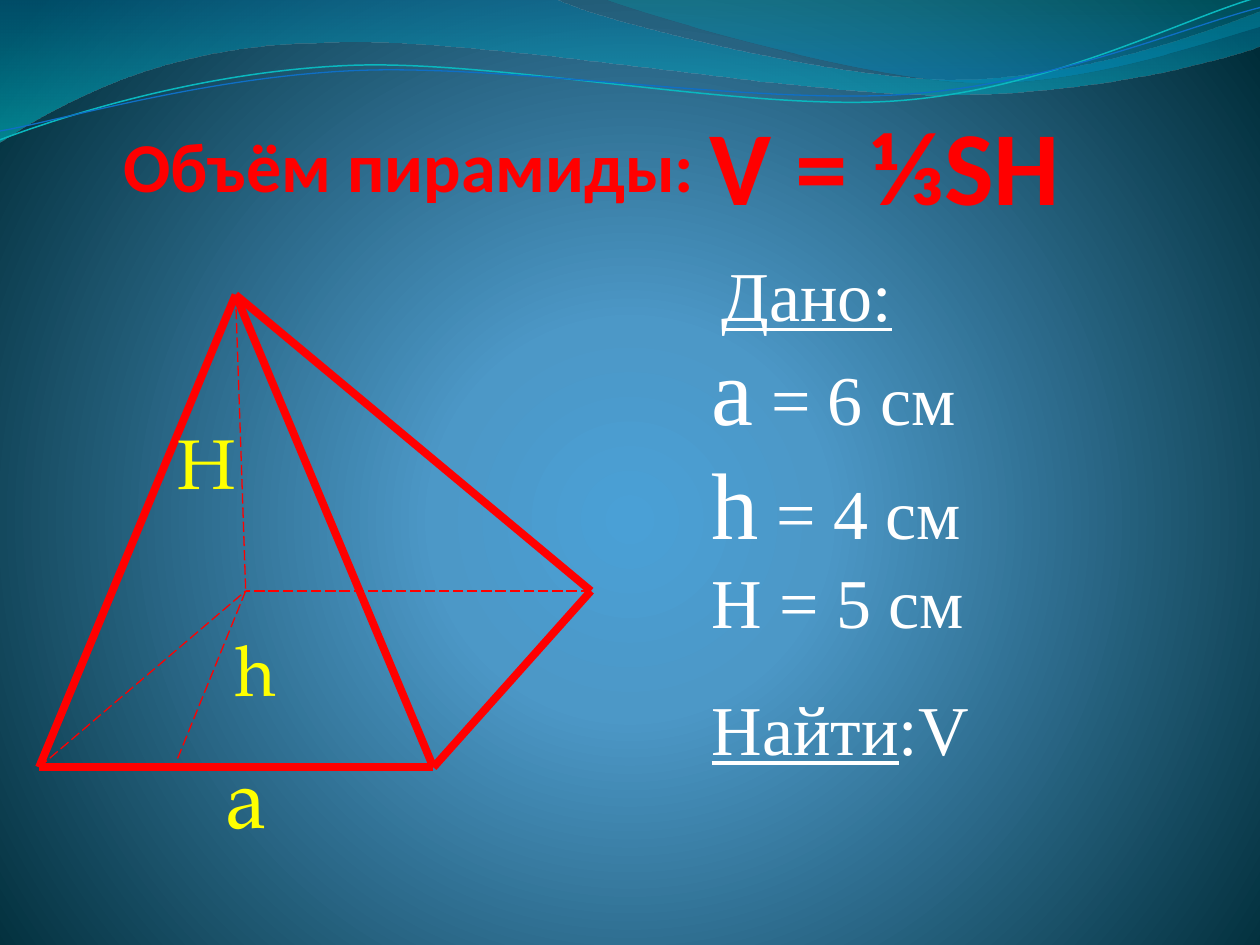
from dataclasses import dataclass

from lxml.etree import SubElement
from pptx import Presentation
from pptx.dml.color import RGBColor
from pptx.enum.dml import MSO_LINE
from pptx.enum.shapes import MSO_CONNECTOR
from pptx.enum.text import MSO_ANCHOR, MSO_AUTO_SIZE, PP_ALIGN
from pptx.oxml import parse_xml
from pptx.oxml.ns import nsdecls, qn
from pptx.util import Inches, Pt

RED = RGBColor(0xFF, 0x00, 0x00)
YELLOW = RGBColor(0xFF, 0xFF, 0x00)
WHITE = RGBColor(0xFF, 0xFF, 0xFF)
TEAL = RGBColor(0x0A, 0xB8, 0xBF)
BLUE = RGBColor(0x0F, 0x6F, 0xC6)
SKY = RGBColor(0x4A, 0xA0, 0xD6)
STEEL = RGBColor(0x4C, 0x98, 0xC7)
NIGHT = RGBColor(0x00, 0x2C, 0x38)
HEADING, SERIF, LABEL = "Calibri", "Times New Roman", "TeX Gyre Pagella"
DOWNWARD = '<a:lin ang="5400000" scaled="0"/>'
RADIAL = ('<a:path path="circle"><a:fillToRect l="10000" t="110000" '
          'r="10000" b="100000"/></a:path>')


@dataclass(frozen=True)
class Stop:
    position: int
    color: RGBColor
    opacity: int = 100


@dataclass(frozen=True)
class Span:
    text: str
    size: int
    underline: bool = False


@dataclass(frozen=True)
class Style:
    font: str
    color: RGBColor
    bold: bool = False
    align: PP_ALIGN = PP_ALIGN.LEFT


@dataclass(frozen=True)
class Wave:
    """A start point, cubic curves of three points and straight pieces of one."""
    start: tuple
    pieces: tuple
    stops: tuple = ()
    color: RGBColor | None = None
    weight: float = 0


FORMULA = Style(HEADING, RED, True)
TITLE = Style(HEADING, RED, True, PP_ALIGN.CENTER)
GIVEN = Style(SERIF, WHITE)
MARK = Style(LABEL, YELLOW, align=PP_ALIGN.CENTER)

WAVES = (
    Wave((0, -0.01), (
        ((4.4, -0.01),),
        ((4.76, 0.17), (6.64, 0.63), (7.58, 0.63)),
        ((8.53, 0.63), (9.58, 0.26), (10, 0.09)),
        ((10.01, 0.36),),
        ((9.83, 0.44), (8.7, 0.76), (7.46, 0.75)),
        ((6.22, 0.75), (3.82, 0.28), (2.57, 0.34)),
        ((1.29, 0.35), (0.46, 0.83), (-0.01, 1.13))),
        stops=(Stop(0, RGBColor(0x00, 0x74, 0xA1), 45),
               Stop(100, RGBColor(0x00, 0xC6, 0xCF), 55))),
    Wave((4.79, -0.01), (
        ((5.09, 0.11), (6.82, 0.62), (7.69, 0.65)),
        ((8.56, 0.69), (9.61, 0.32), (10, 0.21)),
        ((10, 0),)),
        stops=(Stop(0, RGBColor(0x00, 0xA1, 0xA9), 30),
               Stop(80, RGBColor(0x00, 0x8B, 0xBF), 45))),
    Wave((0, 1.11), (
        ((0.48, 0.93), (1.58, 0.57), (2.77, 0.52)),
        ((3.95, 0.47), (5.93, 0.89), (7.13, 0.8)),
        ((8.33, 0.71), (9.38, 0.15), (9.98, -0.02))), color=TEAL, weight=0.85),
    Wave((0, 1.04), (
        ((0.47, 0.96), (1.64, 0.61), (2.83, 0.56)),
        ((4.03, 0.51), (5.97, 0.83), (7.17, 0.75)),
        ((8.36, 0.67), (9.41, 0.21), (10, 0.06))), color=BLUE, weight=0.75),
)

# Pyramid vertices
APEX, FRONT_LEFT, FRONT_RIGHT = (1.87, 2.34), (0.31, 6.09), (3.44, 6.09)
BACK_RIGHT, BACK_LEFT, HEIGHT_FOOT = (4.69, 4.69), (1.95, 4.69), (1.41, 6.02)
VISIBLE_EDGES = ((APEX, FRONT_LEFT), (APEX, FRONT_RIGHT), (FRONT_LEFT, FRONT_RIGHT),
                 (FRONT_RIGHT, BACK_RIGHT), (APEX, BACK_RIGHT))
HIDDEN_EDGES = ((BACK_RIGHT, BACK_LEFT), (FRONT_LEFT, BACK_LEFT),
                (APEX, BACK_LEFT), (HEIGHT_FOOT, BACK_LEFT))


def set_gradient(parent, stops: tuple, direction: str) -> None:
    """Swap the solid fill in parent for a gradient."""
    marks = "".join(
        f'<a:gs pos="{stop.position * 1000}"><a:srgbClr val="{stop.color}">'
        f'<a:alpha val="{stop.opacity * 1000}"/></a:srgbClr></a:gs>' for stop in stops)
    gradient = parse_xml(f'<a:gradFill {nsdecls("a")} rotWithShape="1">'
                         f'<a:gsLst>{marks}</a:gsLst>{direction}</a:gradFill>')
    parent.replace(parent.find(qn("a:solidFill")), gradient)


def bend(shape, pieces: tuple) -> None:
    """Join the three straight steps of each curved piece into one cubic curve."""
    outline = shape.element.find(".//" + qn("a:path"))
    steps = iter(outline.findall(qn("a:lnTo")))
    for piece in pieces:
        group = [next(steps) for _ in piece]
        if len(group) == 3:
            curve = parse_xml(f'<a:cubicBezTo {nsdecls("a")}/>')
            group[0].addprevious(curve)
            for step in group:
                curve.append(step[0])
                outline.remove(step)


def draw_wave(page, wave: Wave) -> None:
    builder = page.shapes.build_freeform(*map(Inches, wave.start), scale=1.0)
    points = [tuple(map(Inches, point)) for piece in wave.pieces for point in piece]
    builder.add_line_segments(points, close=bool(wave.stops))
    shape = builder.convert_to_shape()
    bend(shape, wave.pieces)
    shape.shadow.inherit = False
    if wave.stops:
        shape.fill.solid()
        set_gradient(shape.element.spPr, wave.stops, DOWNWARD)
        shape.line.fill.background()
    else:
        shape.fill.background()
        shape.line.color.rgb = wave.color
        shape.line.width = Pt(wave.weight)


def draw_edge(page, start: tuple, end: tuple, hidden: bool) -> None:
    ends = [Inches(value) for value in (*start, *end)]
    edge = page.shapes.add_connector(MSO_CONNECTOR.STRAIGHT, *ends)
    edge.line.color.rgb = RED
    edge.line.width = Pt(0.75 if hidden else 4.5)
    if hidden:
        edge.line.dash_style = MSO_LINE.LONG_DASH
    SubElement(edge.element.spPr, qn("a:effectLst"))


def write(box, lines: tuple, style: Style) -> None:
    frame = box.text_frame
    for index, spans in enumerate(lines):
        para = frame.add_paragraph() if index else frame.paragraphs[0]
        para.alignment = style.align
        for part in spans:
            span = para.add_run()
            span.text = part.text
            span.font.name = style.font
            span.font.size = Pt(part.size)
            span.font.bold = style.bold
            span.font.underline = part.underline
            span.font.color.rgb = style.color


def add_text(page, place: tuple, lines: tuple, style: Style, wrap: bool = True):
    box = page.shapes.add_textbox(*map(Inches, place))
    box.text_frame.word_wrap = wrap
    write(box, lines, style)
    return box


def sit_on_bottom(box) -> None:
    frame = box.text_frame
    frame.word_wrap = True
    frame.auto_size = MSO_AUTO_SIZE.NONE
    frame.vertical_anchor = MSO_ANCHOR.BOTTOM
    frame.margin_left = frame.margin_right = frame.margin_top = frame.margin_bottom = 0


def main() -> None:
    deck = Presentation()
    deck.slide_width, deck.slide_height = Inches(10), Inches(7.5)
    page = deck.slides.add_slide(deck.slide_layouts[5])

    # Background and waves
    page.background.fill.solid()
    set_gradient(page.element.find(".//" + qn("p:bgPr")),
                 (Stop(0, SKY), Stop(25, STEEL), Stop(100, NIGHT)), RADIAL)
    for wave in WAVES:
        draw_wave(page, wave)

    # Pyramid
    for edges, hidden in ((VISIBLE_EDGES, False), (HIDDEN_EDGES, True)):
        for start, end in edges:
            draw_edge(page, start, end, hidden)

    # Title, brought in front of the waves, and formula
    title = page.shapes.title
    title.element.getparent().append(title.element)
    title.left, title.top, title.width, title.height = map(Inches, (0.94, 0.86, 4.61, 0.78))
    write(title, ((Span("Объём пирамиды:", 40),),), TITLE)
    formula = add_text(page, (5.63, 1.02, 3.36, 0.78), ((Span("V = ⅓SH", 60),),), FORMULA)
    for box in (title, formula):
        sit_on_bottom(box)

    # Given values and question
    add_text(page, (5.63, 1.95, 1.57, 0.77), ((Span("Дано:", 40, True),),), GIVEN, wrap=False)
    add_text(page, (5.55, 2.58, 2.34, 2.59),
             ((Span("а", 54), Span(" = 6 см", 40)),
              (Span("h", 54), Span(" = 4 см", 40)),
              (Span("Н = 5 см", 40),)), GIVEN)
    add_text(page, (5.55, 5.39, 2.26, 0.77),
             ((Span("Найти", 40, True), Span(":V", 40)),), GIVEN, wrap=False)

    # Pyramid labels
    for text, size, place in (("а", 48, (1.56, 5.86, 0.78, 0.91)),
                              ("h", 40, (1.64, 4.92, 0.78, 0.77)),
                              ("H", 40, (1.25, 3.28, 0.78, 0.77))):
        add_text(page, place, ((Span(text, size),),), MARK)

    deck.save("out.pptx")


if __name__ == "__main__":
    main()
